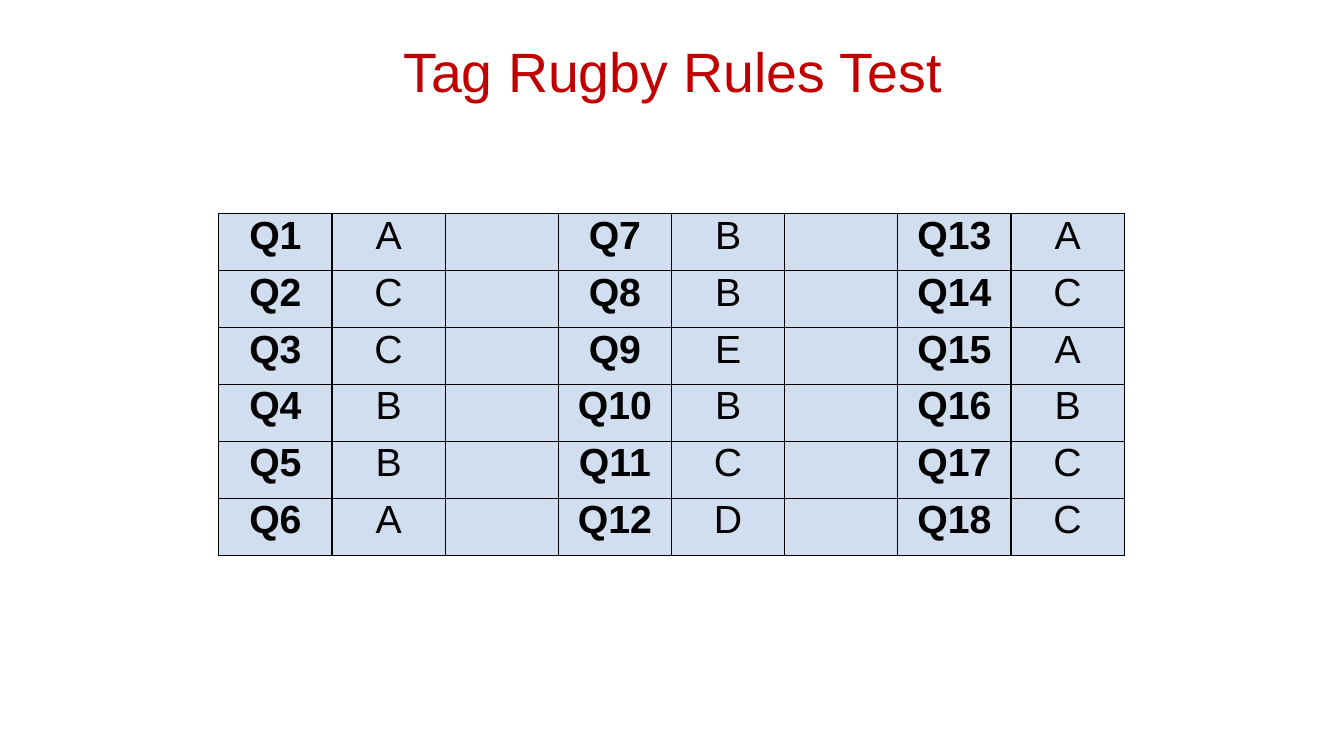
from lxml import etree
from pptx import Presentation
from pptx import util as u
from pptx.dml.color import RGBColor
from pptx.enum import text
from pptx.oxml import ns

ANSWERS = "ACCBBABBEBCDACABCC"
ROWS, COLUMNS = 6, 8
BLOCK_WIDTH = 3  # question, answer, spacer


def color(hex_value):
    return RGBColor.from_string(hex_value)


def write(frame, content, size=28, bold=False, hex_color="000000", spacing=1.0):
    paragraph = frame.paragraphs[0]
    paragraph.alignment = text.PP_ALIGN.CENTER
    paragraph.line_spacing = spacing
    run = paragraph.add_run()
    run.text = content
    run.font.name = "Arial"
    run.font.size = u.Pt(size)
    run.font.bold = bold
    run.font.color.rgb = color(hex_color)


def style_cell(cell):
    cell.margin_left = cell.margin_right = 0
    cell.margin_top = cell.margin_bottom = 0
    # Borders come before the fill in the cell properties
    properties = cell._tc.get_or_add_tcPr()
    for side in ("a:lnL", "a:lnR", "a:lnT", "a:lnB"):
        line = etree.SubElement(properties, ns.qn(side), w=str(u.Pt(1)))
        fill = etree.SubElement(line, ns.qn("a:solidFill"))
        etree.SubElement(fill, ns.qn("a:srgbClr"), val="000000")
    cell.fill.solid()
    cell.fill.fore_color.rgb = color("D0DEEF")


def add_title(slide, left, top, width, height):
    title = slide.shapes.title
    title.left, title.top = u.Inches(left), u.Inches(top)
    title.width, title.height = u.Inches(width), u.Inches(height)
    frame = title.text_frame
    frame.word_wrap = True
    frame.auto_size = text.MSO_AUTO_SIZE.NONE
    frame.vertical_anchor = text.MSO_ANCHOR.MIDDLE
    frame.margin_left = frame.margin_right = u.Inches(0.1)
    frame.margin_top = frame.margin_bottom = u.Inches(0.1)
    write(frame, "Tag Rugby Rules Test", size=39.6, hex_color="C00000", spacing=0.9)


def add_answer_table(slide, left, top, width, height):
    table = slide.shapes.add_table(
        ROWS, COLUMNS, u.Inches(left), u.Inches(top), u.Inches(width), u.Inches(height)
    ).table
    table.first_row = table.horz_banding = False
    for cell in table.iter_cells():
        style_cell(cell)

    # Questions run down each block, with the answer to the right
    for index, answer in enumerate(ANSWERS):
        block, row = divmod(index, ROWS)
        column = block * BLOCK_WIDTH
        write(table.cell(row, column).text_frame, f"Q{index + 1}", bold=True)
        write(table.cell(row, column + 1).text_frame, answer)


def main():
    presentation = Presentation()
    presentation.slide_width = u.Inches(13.33)
    presentation.slide_height = u.Inches(7.5)
    slide = presentation.slides.add_slide(presentation.slide_layouts[5])
    add_title(slide, 0.92, 0.38, 11.5, 0.72)
    add_answer_table(slide, 2.17, 2.12, 8.98, 3.39)
    presentation.save("out.pptx")


if __name__ == "__main__":
    main()
